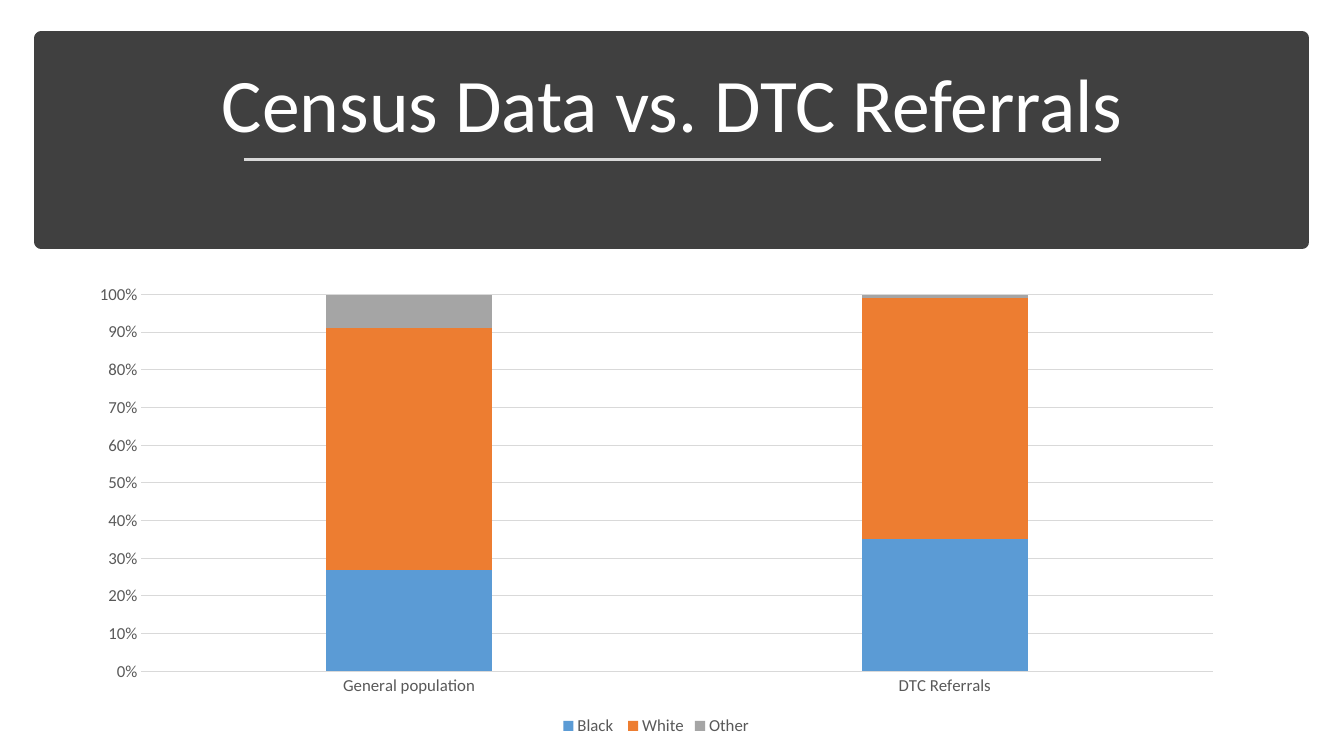
from pptx import Presentation
from pptx.chart.data import CategoryChartData
from pptx.dml.color import RGBColor
from pptx.enum.chart import XL_CHART_TYPE as ChartType
from pptx.enum.chart import XL_LEGEND_POSITION as LegendPos
from pptx.enum.chart import XL_TICK_MARK as TickMark
from pptx.enum.shapes import MSO_CONNECTOR as Connector
from pptx.enum.shapes import MSO_SHAPE as Shape
from pptx.enum.text import MSO_ANCHOR as Anchor
from pptx.enum.text import PP_ALIGN as Align
from pptx.oxml.ns import qn
from pptx.util import Pt

FONT = "Calibri"
WHITE = RGBColor(0xFF, 0xFF, 0xFF)
BAND = RGBColor(0x40, 0x40, 0x40)
RULE = RGBColor(0xD9, 0xD9, 0xD9)
LABEL = RGBColor(0x59, 0x59, 0x59)
BLUE = RGBColor(0x5B, 0x9B, 0xD5)
ORANGE = RGBColor(0xED, 0x7D, 0x31)
GRAY = RGBColor(0xA5, 0xA5, 0xA5)

CATEGORIES = ["General population", "DTC Referrals"]
SERIES = [
    ("Black ", (27, 35), BLUE),
    ("White", (64, 64), ORANGE),
    ("Other", (9, 1), GRAY),
]


def style_font(font, size, color):
    font.name = FONT
    font.size = Pt(size)
    font.color.rgb = color


def add_band(slide, x, y, w, h):
    sp = slide.shapes.add_shape(Shape.RECTANGLE, Pt(x), Pt(y), Pt(w), Pt(h))
    sp.shadow.inherit = False
    sp.fill.solid()
    sp.fill.fore_color.rgb = BAND
    sp.line.color.rgb = BAND
    sp.line.width = Pt(10)


def add_title(slide, text, x, y, w, h):
    tf = slide.shapes.add_textbox(Pt(x), Pt(y), Pt(w), Pt(h)).text_frame
    tf.word_wrap = True
    tf.vertical_anchor = Anchor.BOTTOM
    tf.text = text
    p = tf.paragraphs[0]
    p.alignment = Align.CENTER
    p.line_spacing = 0.9
    style_font(p.runs[0].font, 54, WHITE)


def add_rule(slide, x1, x2, y):
    line = slide.shapes.add_connector(Connector.STRAIGHT, Pt(x1), Pt(y), Pt(x2), Pt(y))
    line.line.color.rgb = RULE
    line.line.width = Pt(1.75)
    sp_pr = line._element.spPr
    sp_pr.append(sp_pr.makeelement(qn("a:effectLst"), {}))


def style_axis(axis):
    axis.major_tick_mark = axis.minor_tick_mark = TickMark.NONE
    axis.format.line.fill.background()
    style_font(axis.tick_labels.font, 12, LABEL)


def add_share_chart(slide, x, y, w, h):
    data = CategoryChartData()
    data.categories = CATEGORIES
    for name, values, _ in SERIES:
        data.add_series(name, values)
    chart = slide.shapes.add_chart(
        ChartType.COLUMN_STACKED_100, Pt(x), Pt(y), Pt(w), Pt(h), data
    ).chart
    chart.has_title = False
    chart.font.name = FONT
    chart.font.size = Pt(10)

    # Columns
    plot = chart.plots[0]
    plot.gap_width = 222
    plot.overlap = 100
    plot.vary_by_categories = False
    for series, (_, _, color) in zip(plot.series, SERIES):
        series.format.fill.solid()
        series.format.fill.fore_color.rgb = color

    # Axes and gridlines
    style_axis(chart.category_axis)
    axis = chart.value_axis
    style_axis(axis)
    axis.minimum_scale = 0
    axis.maximum_scale = 1
    axis.major_unit = 0.1
    axis.tick_labels.number_format = "0%"
    axis.tick_labels.number_format_is_linked = False
    axis.has_major_gridlines = True
    grid = axis.major_gridlines.format.line
    grid.color.rgb = RULE
    grid.width = Pt(0.75)

    # Legend
    chart.has_legend = True
    chart.legend.position = LegendPos.BOTTOM
    chart.legend.include_in_layout = False
    style_font(chart.legend.font, 12, LABEL)


def main():
    prs = Presentation()
    prs.slide_width = Pt(960)
    prs.slide_height = Pt(540)
    slide = prs.slides.add_slide(prs.slide_layouts[6])

    # Heading
    add_band(slide, 29.5, 27.4, 900.7, 145.4)
    add_title(slide, "Census Data vs. DTC Referrals", 41.8, 36.7, 877, 73.4)
    add_rule(slide, 174.2, 786.2, 113.8)

    # Shares by group
    add_share_chart(slide, 54.7, 196.6, 828, 331.9)

    prs.save("out.pptx")


if __name__ == "__main__":
    main()
